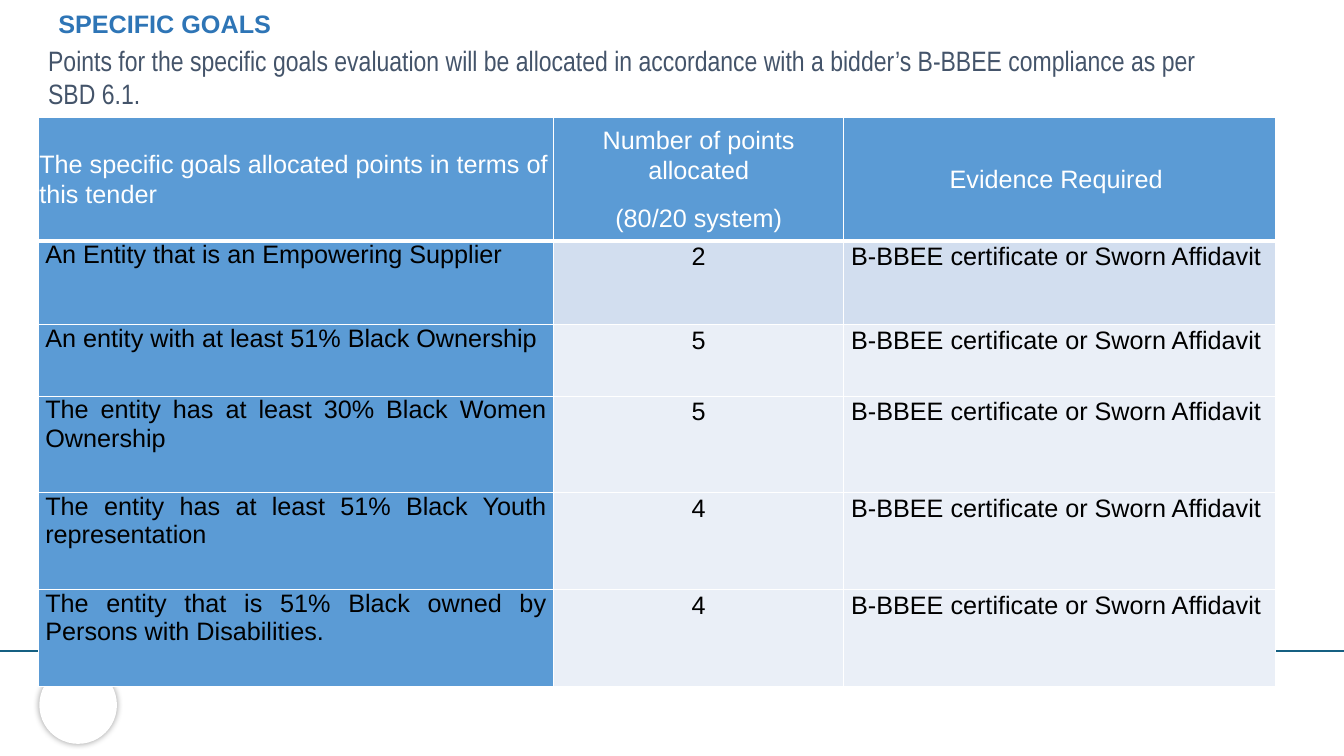
from dataclasses import dataclass

from lxml import etree
from pptx import Presentation
from pptx.dml.color import RGBColor
from pptx.enum.shapes import MSO_CONNECTOR, MSO_SHAPE
from pptx.enum.text import MSO_ANCHOR, PP_ALIGN
from pptx.oxml.ns import qn
from pptx.slide import Slide
from pptx.table import _Cell
from pptx.text.text import _Paragraph
from pptx.util import Inches, Pt

STRAIGHT = MSO_CONNECTOR.STRAIGHT
ELLIPSE = MSO_SHAPE.OVAL
LEFT, CENTER, JUSTIFY = PP_ALIGN.LEFT, PP_ALIGN.CENTER, PP_ALIGN.JUSTIFY
TOP, MIDDLE = MSO_ANCHOR.TOP, MSO_ANCHOR.MIDDLE


@dataclass(frozen=True)
class Theme:
    font: str = "Arial"
    narrow_font: str = "Arial Narrow"
    text_size: int = 18
    intro_size: int = 20
    title: str = "2E75B6"
    intro: str = "44546A"
    rule: str = "156082"
    header: str = "5B9BD5"
    first_band: str = "D2DEEF"
    band: str = "EAEFF7"
    white: str = "FFFFFF"
    black: str = "000000"


THEME = Theme()


@dataclass(frozen=True)
class TextStyle:
    color: str
    size: int = THEME.text_size
    font: str = THEME.font
    bold: bool = False
    align: PP_ALIGN = LEFT
    line_spacing: float = 1.0


@dataclass(frozen=True)
class CellStyle:
    text: TextStyle
    fill: str
    side_inset: float
    anchor: MSO_ANCHOR = TOP


@dataclass(frozen=True)
class TextBox:
    text: str
    left: float
    top: float
    width: float
    height: float
    style: TextStyle


@dataclass(frozen=True)
class Goal:
    name: str
    points: int
    row_height: float
    fill: str = THEME.band


TITLE = TextBox("SPECIFIC GOALS", 0.48, 0.07, 11.94, 0.78,
                TextStyle(THEME.title, bold=True, line_spacing=0.9))
INTRO = TextBox(
    "Points for the specific goals evaluation will be allocated in accordance "
    "with a bidder’s B-BBEE compliance as per SBD 6.1.",
    0.38, 0.38, 11.74, 0.77,
    TextStyle(THEME.intro, THEME.intro_size, THEME.narrow_font))

HEADERS = [
    ["The specific goals allocated points in terms of this tender"],
    ["Number of points allocated", "(80/20 system)"],
    ["Evidence Required "],
]
EVIDENCE = "B-BBEE certificate or Sworn Affidavit "
GOALS = [
    Goal("An Entity that is an Empowering Supplier", 2, 0.83, THEME.first_band),
    Goal("An entity with at least 51% Black Ownership", 5, 0.71),
    Goal("The entity has at least 30% Black Women Ownership", 5, 0.96),
    Goal("The entity has at least 51% Black Youth representation", 4, 0.96),
    Goal("The entity that is 51% Black owned by Persons with Disabilities.", 4, 0.96),
]
COLUMN_WIDTHS = [5.11, 2.88, 4.28]
HEADER_HEIGHT = 1.23


def add_text(paragraph: _Paragraph, text: str, style: TextStyle) -> None:
    paragraph.alignment = style.align
    paragraph.line_spacing = style.line_spacing
    run = paragraph.add_run()
    run.text = text
    run.font.name = style.font
    run.font.size = Pt(style.size)
    run.font.bold = style.bold
    run.font.color.rgb = RGBColor.from_string(style.color)


def add_text_box(slide: Slide, box: TextBox) -> None:
    shape = slide.shapes.add_textbox(Inches(box.left), Inches(box.top),
                                     Inches(box.width), Inches(box.height))
    shape.text_frame.word_wrap = True
    add_text(shape.text_frame.paragraphs[0], box.text, box.style)


def add_color(parent: etree._Element, color: str) -> etree._Element:
    return etree.SubElement(parent, qn("a:srgbClr"), val=color)


def add_footer(slide: Slide, slide_width: int) -> None:
    """Draw the rule across the slide and the softly shadowed circle below it."""
    rule = slide.shapes.add_connector(STRAIGHT, slide_width, Inches(6.46), 0, Inches(6.46))
    rule.line.color.rgb = RGBColor.from_string(THEME.rule)
    rule.line.width = Pt(1.5)
    etree.SubElement(rule._element.spPr, qn("a:effectLst"))

    circle = slide.shapes.add_shape(ELLIPSE, Inches(0.39), Inches(6.61),
                                    Inches(0.77), Inches(0.77))
    circle.fill.solid()
    circle.fill.fore_color.rgb = RGBColor.from_string(THEME.white)
    circle.line.fill.background()
    circle.shadow.inherit = False
    effects = circle._element.spPr.find(qn("a:effectLst"))
    shadow = etree.SubElement(effects, qn("a:outerShdw"), blurRad=str(Pt(5)),
                              dist="0", dir="0", rotWithShape="0")
    etree.SubElement(add_color(shadow, THEME.black), qn("a:alpha"), val="40000")


def set_borders(cell: _Cell, top: float, bottom: float) -> None:
    properties = cell._tc.get_or_add_tcPr()
    for side, width in (("L", 1), ("R", 1), ("T", top), ("B", bottom)):
        line = etree.SubElement(properties, qn(f"a:ln{side}"), w=str(Pt(width)))
        add_color(etree.SubElement(line, qn("a:solidFill")), THEME.white)


def fill_cell(cell: _Cell, lines: list[str], style: CellStyle) -> None:
    cell.fill.solid()
    cell.fill.fore_color.rgb = RGBColor.from_string(style.fill)
    cell.vertical_anchor = style.anchor
    cell.margin_left = cell.margin_right = Inches(style.side_inset)
    cell.margin_top = cell.margin_bottom = 0
    for index, text in enumerate(lines):
        paragraph = cell.text_frame.add_paragraph() if index else cell.text_frame.paragraphs[0]
        if index:
            paragraph.space_before = Pt(4.8)
        if index < len(lines) - 1:
            paragraph.space_after = Pt(8)
        add_text(paragraph, text, style.text)


def add_goals_table(slide: Slide) -> None:
    heights = [HEADER_HEIGHT] + [goal.row_height for goal in GOALS]
    table = slide.shapes.add_table(
        len(heights), len(COLUMN_WIDTHS), Inches(0.38), Inches(1.16),
        Inches(sum(COLUMN_WIDTHS)), Inches(sum(heights))).table
    table.first_row = table.horz_banding = False
    for column, width in zip(table.columns, COLUMN_WIDTHS):
        column.width = Inches(width)
    for index, (row, height) in enumerate(zip(table.rows, heights)):
        row.height = Inches(height)
        for cell in row.cells:
            set_borders(cell, top=3 if index == 1 else 1, bottom=3 if index == 0 else 1)

    for column, lines in enumerate(HEADERS):
        text = TextStyle(THEME.white, align=CENTER if column else LEFT, line_spacing=1.07)
        fill_cell(table.cell(0, column), lines, CellStyle(text, THEME.header, 0.01, MIDDLE))

    name_text = TextStyle(THEME.black, align=JUSTIFY)
    value_text = TextStyle(THEME.black, align=CENTER, line_spacing=1.07)
    for row, goal in enumerate(GOALS, start=1):
        fill_cell(table.cell(row, 0), [goal.name], CellStyle(name_text, THEME.header, 0.07))
        fill_cell(table.cell(row, 1), [str(goal.points)], CellStyle(value_text, goal.fill, 0.07))
        fill_cell(table.cell(row, 2), [EVIDENCE], CellStyle(value_text, goal.fill, 0.01))


def main() -> None:
    presentation = Presentation()
    presentation.slide_width = Inches(13.33)
    presentation.slide_height = Inches(7.5)
    slide = presentation.slides.add_slide(presentation.slide_layouts[6])
    add_footer(slide, presentation.slide_width)
    add_text_box(slide, TITLE)
    add_goals_table(slide)
    add_text_box(slide, INTRO)
    presentation.save("out.pptx")


if __name__ == "__main__":
    main()
